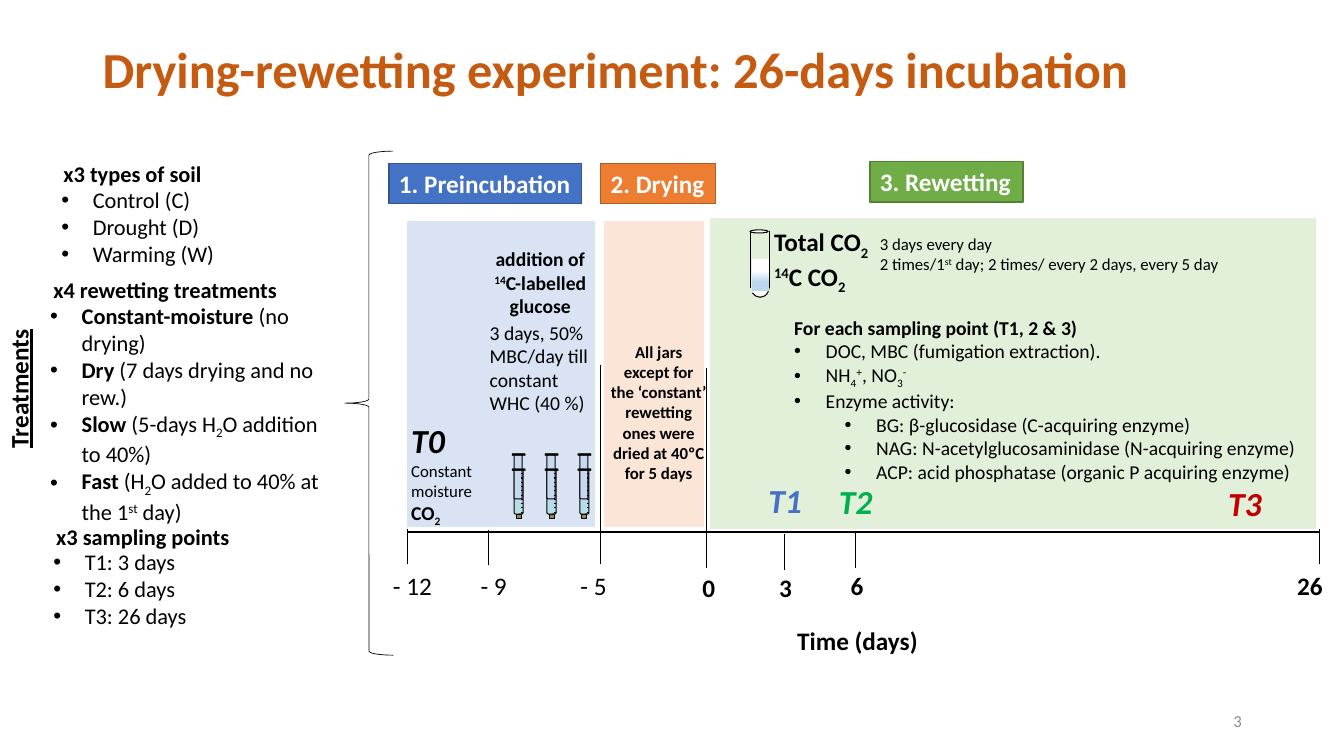
from dataclasses import dataclass

from lxml import etree
from pptx import Presentation
from pptx.dml.color import RGBColor
from pptx.enum.shapes import MSO_CONNECTOR, MSO_SHAPE
from pptx.enum.text import MSO_ANCHOR, MSO_AUTO_SIZE, PP_ALIGN
from pptx.oxml.ns import qn
from pptx.util import Pt

LEFT, CENTER, RIGHT = PP_ALIGN.LEFT, PP_ALIGN.CENTER, PP_ALIGN.RIGHT
TOP, MIDDLE = MSO_ANCHOR.TOP, MSO_ANCHOR.MIDDLE
GROW = MSO_AUTO_SIZE.SHAPE_TO_FIT_TEXT
RECT, ROUNDED, OVAL = MSO_SHAPE.RECTANGLE, MSO_SHAPE.ROUNDED_RECTANGLE, MSO_SHAPE.OVAL
ARC, BRACE = MSO_SHAPE.ARC, MSO_SHAPE.LEFT_BRACE
STRAIGHT = MSO_CONNECTOR.STRAIGHT


@dataclass(frozen=True)
class Theme:
    font: str = "Calibri"
    black: str = "000000"
    white: str = "FFFFFF"
    grey: str = "8C8C8C"
    title: str = "C55A11"
    liquid: str = "BDD7EE"
    barrel: str = "B7DEE8"
    plunger: str = "C6D9F1"
    tip: str = "948A54"
    title_size: int = 36
    point_size: int = 24
    label_size: int = 18
    list_size: int = 16
    body_size: int = 14
    small_size: int = 12
    hair: float = 0.5
    fine: float = 0.75


class SlideBuilder:
    def __init__(self, slide, theme):
        self.slide, self.theme = slide, theme

    def fill_text(self, frame, paras, size, color, marks="", align=LEFT, levels=()):
        """Each paragraph is a string or a list of strings and (text, marks[, size]).

        Marks: b bold, i italic, u underline, - subscript, + superscript.
        levels gives the bullet depth of each paragraph, None for no bullet.
        """
        for index, spans in enumerate(paras):
            para = frame.paragraphs[0] if index == 0 else frame.add_paragraph()
            para.alignment = align
            for item in [spans] if isinstance(spans, str) else spans:
                item = (item, marks) if isinstance(item, str) else item
                span = para.add_run()
                span.text = item[0]
                self.format_span(span, item[2] if len(item) > 2 else size, color, item[1])
            if levels and levels[index] is not None:
                self.add_bullet(para, levels[index])

    def format_span(self, span, size, color, marks):
        font = span.font
        font.name, font.size = self.theme.font, Pt(size)
        font.color.rgb = RGBColor.from_string(color)
        font.bold, font.italic, font.underline = "b" in marks, "i" in marks, "u" in marks
        if "-" in marks or "+" in marks:
            font._element.set("baseline", "-25000" if "-" in marks else "30000")

    def add_bullet(self, para, level):
        para.level = level
        properties = para._p.get_or_add_pPr()
        properties.set("marL", str(Pt(22.5 + 36 * level)))
        properties.set("indent", str(Pt(-22.5)))
        etree.SubElement(properties, qn("a:buFont")).set("typeface", "Arial")
        etree.SubElement(properties, qn("a:buChar")).set("char", "•")

    def title(self, at, text):
        box = self.slide.shapes.title
        box.left, box.top, box.width, box.height = map(Pt, at)
        frame = box.text_frame
        frame.vertical_anchor, frame.word_wrap = TOP, True
        frame.auto_size = MSO_AUTO_SIZE.NONE
        self.fill_text(frame, [text], self.theme.title_size, self.theme.title, "b")
        frame.paragraphs[0].line_spacing = 0.9

    def text(self, at, paras, size, color=None, wrap=False, anchor=TOP, **style):
        box = self.slide.shapes.add_textbox(*map(Pt, at))
        frame = box.text_frame
        frame.word_wrap, frame.auto_size, frame.vertical_anchor = wrap, GROW, anchor
        self.fill_text(frame, paras, size, color or self.theme.black, **style)
        return box

    def shape(self, kind, at, fill=None, line=None, weight=0.75):
        shape = self.slide.shapes.add_shape(kind, *map(Pt, at))
        shape.shadow.inherit = False
        if fill:
            shape.fill.solid()
            shape.fill.fore_color.rgb = RGBColor.from_string(fill)
        else:
            shape.fill.background()
        if line:
            shape.line.color.rgb = RGBColor.from_string(line)
            shape.line.width = Pt(weight)
        else:
            shape.line.fill.background()
        return shape

    def line(self, x1, y1, x2, y2, weight):
        line = self.slide.shapes.add_connector(STRAIGHT, *map(Pt, (x1, y1, x2, y2)))
        line.line.color.rgb = RGBColor.from_string(self.theme.black)
        line.line.width = Pt(weight)
        etree.SubElement(line._element.spPr, qn("a:effectLst"))

    def phase(self, panel, panel_fill, tag, tag_fill, tag_line, name):
        self.shape(RECT, panel, panel_fill, panel_fill, self.theme.hair)
        frame = self.shape(RECT, tag, tag_fill, tag_line, 1).text_frame
        frame.word_wrap, frame.auto_size, frame.vertical_anchor = False, GROW, TOP
        self.fill_text(frame, [name], self.theme.label_size, self.theme.white, "b")

    def syringe(self, left):
        theme = self.theme
        self.shape(RECT, (left + 2.9, 367.2, 3.6, 2.9), theme.tip, theme.black)
        self.shape(ROUNDED, (left + 1.4, 335.5, 6.5, 31.7), theme.barrel, theme.black)
        self.shape(ROUNDED, (left + 1.4, 324.7, 5.8, 31.7), theme.plunger, theme.black)
        for top in (334.8, 324):
            self.shape(ROUNDED, (left, top, 9.4, 1.4), theme.black, theme.black, 0.25)
        for mark in range(10):
            y = 338.4 + 3.04 * mark
            self.line(left + 6.5, y, left + 7.9, y, theme.fine)

    def test_tube(self):
        theme = self.theme
        for x in (536.4, 549.4):
            self.line(x, 164.9, x, 205.6, theme.fine)
        bottom = self.shape(ARC, (535.7, 198.7, 14.4, 13), theme.white, theme.black)
        bottom.adjustments[0], bottom.adjustments[1] = 97.2, 32.02
        bottom.rotation = 90
        self.shape(OVAL, (535.7, 164.2, 13, 2.2), theme.white, theme.black)
        liquid = self.shape(RECT, (537.1, 185, 12.2, 23))
        liquid.fill.gradient()
        liquid.fill.gradient_angle = 270
        stops = zip(liquid.fill.gradient_stops, (0.38, 0.71), (theme.white, theme.liquid))
        for stop, position, color in stops:
            stop.position = position
            stop.color.rgb = RGBColor.from_string(color)


def add_treatments(page, theme):
    size = theme.list_size
    page.text((-37.4, 263.5, 100, 27.4), ["Treatments"], theme.label_size,
              marks="bu").rotation = 270
    for at, heading in (((38.2, 110.9, 114.5, 26.6), "x3 types of soil"),
                        ((31, 193.7, 176.4, 26.6), "x4 rewetting treatments"),
                        ((33.1, 370.1, 139.7, 26.6), "x3 sampling points")):
        page.text(at, [heading], size, marks="b")
    for at, items in (
            ((36.7, 129.6, 125.3, 65.5), ["Control (C)", "Drought (D)", "Warming (W)"]),
            ((31, 388.1, 110.9, 65.5), ["T1: 3 days", "T2: 6 days", "T3: 26 days"])):
        page.text(at, items, size, levels=(0, 0, 0))
    page.text((28.8, 212.4, 218.9, 162.7), [
        [("Constant-moisture", "b"), " (no drying)"],
        [("Dry", "b"), " (7 days drying and no rew.)"],
        [("Slow", "b"), " (5-days H", ("2", "-"), "O addition to 40%)"],
        [("Fast", "b"), " (H", ("2", "-"), "O added to 40% at the 1", ("st", "+"), " day)"],
    ], size, wrap=True, levels=(0, 0, 0, 0))
    page.shape(BRACE, (246.2, 108, 34.6, 360), None, theme.black, theme.hair)


def add_phases(page, theme):
    body, small = theme.body_size, theme.small_size
    page.phase((290.9, 158.4, 133.9, 217.4), "DAE3F3",
               (277.9, 116.6, 137.5, 29), "4472C4", "325491", "1. Preincubation")
    page.phase((432, 158.4, 70.6, 217.4), "FBE5D6",
               (429.1, 116.6, 82.1, 29), "ED7D31", "AF5C24", "2. Drying")
    page.phase((507.6, 156.2, 432, 221), "E2F0D9",
               (621.4, 115.2, 109.4, 29), "70AD47", "538035", "3. Rewetting")
    page.text((560.2, 221.8, 373, 126), [
        [("For each sampling point (T1, 2 & 3)", "b")],
        "DOC, MBC (fumigation extraction).",
        ["NH", ("4", "-"), ("+", "+"), ", NO", ("3", "-"), ("-", "+")],
        "Enzyme activity:",
        "BG: β-glucosidase (C-acquiring enzyme)",
        "NAG: N-acetylglucosaminidase (N-acquiring enzyme)",
        "ACP: acid phosphatase (organic P acquiring enzyme)",
    ], body, wrap=True, levels=(None, 0, 0, 0, 1, 1, 1))
    page.text((286.6, 296.6, 73.4, 82.1), [
        [("T0", "bi", theme.point_size)], [("Constant moisture", "", small)],
        [("CO", "b"), ("2", "b-")]], body, wrap=True)
    page.text((340.6, 172.8, 90.7, 58.3), [
        ["addition of ", ("14", "b+"), "C-labelled glucose"]],
        body, wrap=True, marks="b", align=CENTER)
    page.text((342.7, 225.4, 87.8, 74.9),
              ["3 days, 50% MBC/day till constant WHC (40 %)"], body, wrap=True)
    page.text((429.1, 240.5, 82.8, 123.8), [
        "All jars except for the ‘constant’ rewetting ones were dried at 40ºC for 5 days"],
        small, wrap=True, marks="b", align=CENTER)
    for number in range(3):
        page.syringe(365.8 + 23.5 * number)
    page.text((621.4, 163.4, 262.8, 51.1), [
        "3 days every day",
        ["2 times/1", ("st", "+"), " day; 2 times/ every 2 days, every 5 day"]], small)
    page.text((545.8, 158.4, 83.5, 51.1), [
        ["Total CO", ("2", "b-")], [("14", "b+"), "C CO", ("2", "b-")]],
        theme.label_size, marks="b")
    page.test_tube()


def add_timeline(page, theme):
    page.line(290.9, 379.8, 943.2, 379.8, 1.5)
    # day, marks, tick x, tick top, tick bottom, label left, label top, label width
    for day, marks, x, top, bottom, left, label_top, width in (
            ("- 12", "", 290.9, 378, 403.2, 273.6, 403.9, 42.5),
            ("- 9", "", 348.5, 378.7, 403.9, 336.2, 403.9, 33.1),
            ("- 5", "", 429.1, 260.6, 403.2, 407.5, 403.9, 33.1),
            ("0", "b", 504.7, 262.8, 405.4, 494.6, 405.4, 23.8),
            ("3", "b", 560.2, 381.6, 406.8, 549.4, 405.4, 23.8),
            ("6", "b", 611.3, 380.2, 405.4, 600.5, 403.9, 23.8),
            ("26", "b", 942.5, 378, 403.2, 919.4, 403.9, 33.1)):
        page.line(x, bottom, x, top, theme.hair)
        page.text((left, label_top, width, 29), [day], theme.label_size, marks=marks)
    page.text((562.3, 442.8, 101.5, 29), ["Time (days)"], theme.label_size, marks="b")
    for name, left, top, color in (("T1", 541.4, 339.1, "4472C4"),
                                   ("T2", 591.8, 339.8, "00B050"),
                                   ("T3", 869.8, 341.3, "C00000")):
        page.text((left, top, 38.9, 36), [name], theme.point_size, color,
                  marks="bi", align=CENTER)


def main():
    theme = Theme()
    deck = Presentation()
    deck.slide_width, deck.slide_height = Pt(960), Pt(540)
    page = SlideBuilder(deck.slides.add_slide(deck.slide_layouts[5]), theme)
    page.title((66.2, 28.8, 828, 51.1), "Drying-rewetting experiment: 26-days incubation")
    add_treatments(page, theme)
    add_phases(page, theme)
    add_timeline(page, theme)
    page.text((678.2, 500.4, 216, 28.8), ["3"], theme.small_size, theme.grey,
              wrap=True, anchor=MIDDLE, align=RIGHT).text_frame.auto_size = MSO_AUTO_SIZE.NONE
    deck.save("out.pptx")


if __name__ == "__main__":
    main()
